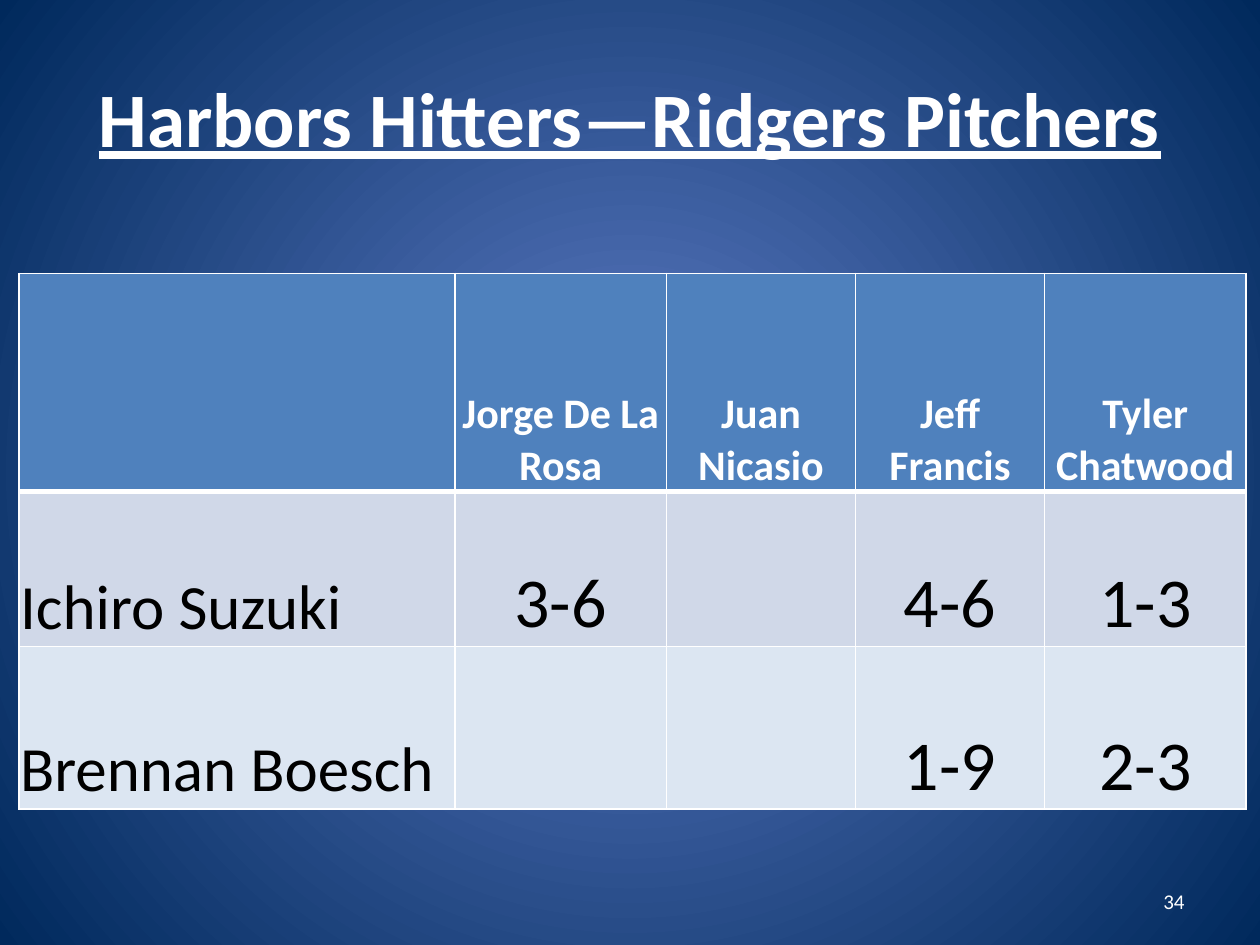
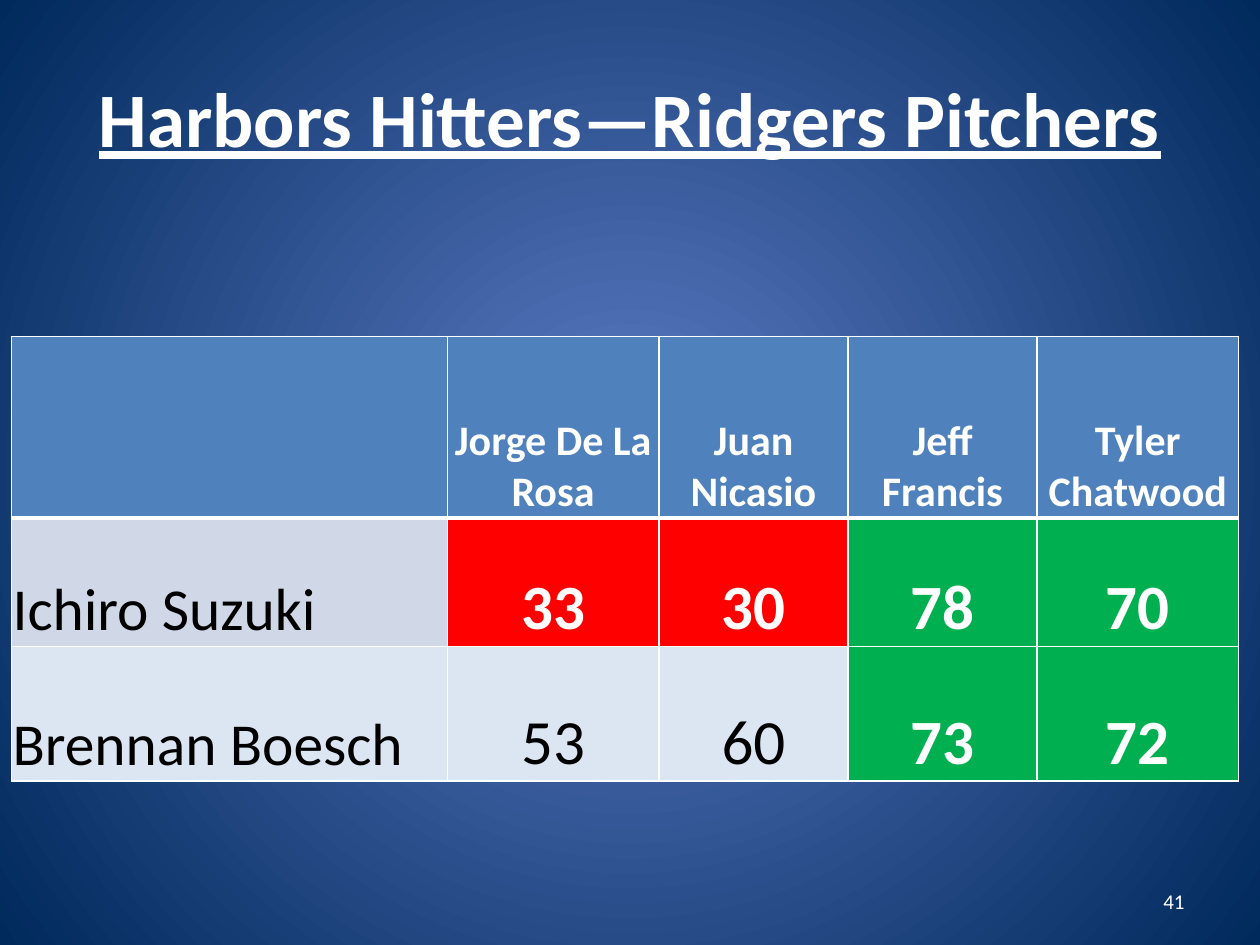
from dataclasses import dataclass

from lxml import etree
from pptx import Presentation
from pptx import util as u
from pptx.dml.color import RGBColor
from pptx.enum import text
from pptx.oxml.ns import qn


@dataclass(frozen=True)
class Theme:
    font: str = "Calibri"
    white: str = "FFFFFF"
    black: str = "000000"
    glow: str = "5E7CC5"
    navy: str = "00295C"
    header: str = "4F81BD"
    bands: tuple = ("D0D8E8", "DCE6F2")
    low: str = "FF0000"
    high: str = "00B050"
    title_size: int = 44
    number_size: int = 12
    header_size: int = 24


TITLE = "Harbors Hitters—Ridgers Pitchers"
PITCHERS = ["Jorge De La Rosa", "Juan Nicasio", "Jeff Francis", "Tyler Chatwood"]
COLUMN_WIDTHS = [3.46, 1.68, 1.5, 1.5, 1.6]
LOW_RATING, HIGH_RATING = 40, 70
LEFT, CENTER, RIGHT = text.PP_ALIGN.LEFT, text.PP_ALIGN.CENTER, text.PP_ALIGN.RIGHT


class MatchupDeck:
    def __init__(self, theme):
        self.theme = theme
        self.deck = Presentation()
        self.deck.slide_width, self.deck.slide_height = u.Inches(10), u.Inches(7.5)
        self.page = None
        self.paint_background()

    def paint_background(self):
        """Give the master a gradient that spreads from the centre."""
        master = self.deck.slide_master
        fill = master.background.fill
        fill.gradient()
        for stop, color in zip(fill.gradient_stops, (self.theme.glow, self.theme.navy)):
            stop.color.rgb = RGBColor.from_string(color)
        gradient = master.element.find(".//" + qn("p:bg")).find(".//" + qn("a:gradFill"))
        gradient.remove(gradient.find(qn("a:lin")))
        circle = etree.SubElement(gradient, qn("a:path"), {"path": "circle"})
        center = dict.fromkeys("ltrb", "50000")
        etree.SubElement(circle, qn("a:fillToRect"), center)

    def add_page(self, number):
        self.page = self.deck.slides.add_slide(self.deck.slide_layouts[6])
        self.add_text(TITLE, (0.5, 0.3, 9, 1.25), self.theme.title_size, CENTER,
                      bold=True, underline=True)
        self.add_text(str(number), (7.17, 6.95, 2.33, 0.4), self.theme.number_size, RIGHT)

    def set_text(self, frame, words, size, align, color, bold=False, underline=False):
        para = frame.paragraphs[0]
        para.text = words
        para.alignment = align
        font = para.font
        font.name, font.size = self.theme.font, u.Pt(size)
        font.bold, font.underline = bold, underline
        font.color.rgb = RGBColor.from_string(color)

    def add_text(self, words, place, size, align, **emphasis):
        box = self.page.shapes.add_textbox(*map(u.Inches, place))
        frame = box.text_frame
        frame.word_wrap = True
        frame.vertical_anchor = text.MSO_ANCHOR.MIDDLE
        self.set_text(frame, words, size, align, self.theme.white, **emphasis)

    def add_borders(self, cell, **widths):
        """Draw white rules, 1 pt unless a side is given another width."""
        properties = cell._tc.get_or_add_tcPr()
        for side in "LRTB":
            width = u.Pt(widths.get(side, 1))
            line = etree.SubElement(properties, qn("a:ln" + side), w=str(width))
            solid = etree.SubElement(line, qn("a:solidFill"))
            etree.SubElement(solid, qn("a:srgbClr"), val=self.theme.white)

    def fill_cell(self, cell, words, size, align, color, fill, bold=False, **borders):
        self.add_borders(cell, **borders)
        cell.fill.solid()
        cell.fill.fore_color.rgb = RGBColor.from_string(fill)
        cell.vertical_anchor = text.MSO_ANCHOR.BOTTOM
        cell.margin_left = cell.margin_right = cell.margin_top = u.Inches(0.01)
        cell.margin_bottom = 0
        self.set_text(cell.text_frame, words, size, align, color, bold)

    def score_style(self, score, band):
        """Numeric ratings are flagged when low or high; records stay plain."""
        flag = None
        if isinstance(score, int):
            if score < LOW_RATING:
                flag = self.theme.low
            elif score >= HIGH_RATING:
                flag = self.theme.high
        if flag:
            return {"color": self.theme.white, "fill": flag, "bold": True}
        return {"color": self.theme.black, "fill": band}

    def add_matchups(self, left, top, row_heights, hitters, name_size, score_size):
        theme = self.theme
        table = self.page.shapes.add_table(
            len(row_heights), len(COLUMN_WIDTHS), u.Inches(left), u.Inches(top),
            u.Inches(sum(COLUMN_WIDTHS)), u.Inches(sum(row_heights))).table
        for column, width in zip(table.columns, COLUMN_WIDTHS):
            column.width = u.Inches(width)
        for row, height in zip(table.rows, row_heights):
            row.height = u.Inches(height)

        # Pitchers across the top
        for col, pitcher in enumerate(["", *PITCHERS]):
            self.fill_cell(table.cell(0, col), pitcher, theme.header_size, CENTER,
                           theme.white, theme.header, bold=True, B=3)

        # One band for each hitter
        for row, (hitter, scores) in enumerate(hitters.items(), start=1):
            band = theme.bands[(row - 1) % 2]
            rule = {"T": 3} if row == 1 else {}
            self.fill_cell(table.cell(row, 0), hitter, name_size, LEFT,
                           theme.black, band, **rule)
            for col, score in enumerate(scores, start=1):
                self.fill_cell(table.cell(row, col), str(score), score_size, CENTER,
                               **self.score_style(score, band), **rule)


def main():
    show = MatchupDeck(Theme())

    # Past records
    show.add_page(34)
    show.add_matchups(0.15, 2.17, [1.73, 1.23, 1.29], {
        "Ichiro Suzuki": ["3-6", "", "4-6", "1-3"],
        "Brennan Boesch": ["", "", "1-9", "2-3"],
    }, name_size=36, score_size=40)

    # Matchup ratings
    show.add_page(41)
    show.add_matchups(0.09, 2.67, [1.44, 1.02, 1.07], {
        "Ichiro Suzuki": [33, 30, 78, 70],
        "Brennan Boesch": [53, 60, 73, 72],
    }, name_size=34, score_size=36)

    show.deck.save("out.pptx")


if __name__ == "__main__":
    main()
